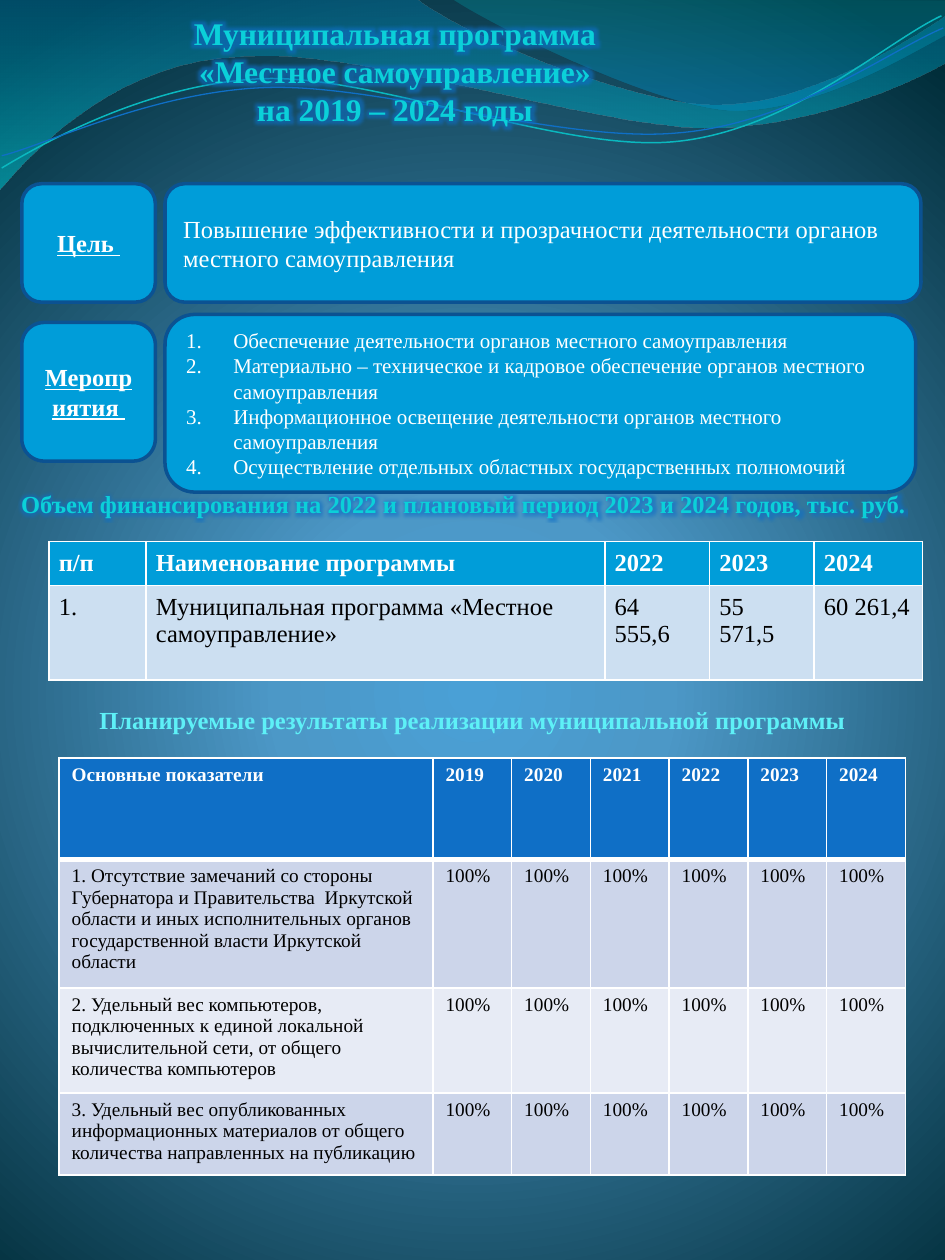
from lxml import etree
from pptx import Presentation
from pptx.dml.color import RGBColor
from pptx.enum.shapes import MSO_SHAPE
from pptx.enum.text import MSO_ANCHOR, MSO_AUTO_SIZE, PP_ALIGN
from pptx.oxml import parse_xml
from pptx.oxml.ns import nsdecls, qn
from pptx.util import Pt

ROUNDED = MSO_SHAPE.ROUNDED_RECTANGLE
TOP, MIDDLE = MSO_ANCHOR.TOP, MSO_ANCHOR.MIDDLE
LEFT, CENTER = PP_ALIGN.LEFT, PP_ALIGN.CENTER
NO_FIT = MSO_AUTO_SIZE.NONE

FONT = "Times New Roman"
WHITE = RGBColor(0xFF, 0xFF, 0xFF)
BLACK = RGBColor(0, 0, 0)
SKY = RGBColor(0x00, 0x9D, 0xD9)
NAVY = RGBColor(0x0B, 0x52, 0x92)
BLUE = RGBColor(0x0F, 0x6F, 0xC6)
TURQUOISE = RGBColor(0x0B, 0xD0, 0xD9)
TEAL = RGBColor(0x0A, 0xB8, 0xBF)
AQUA = RGBColor(0x5E, 0xF0, 0xF7)
PALE = RGBColor(0xCC, 0xDF, 0xF1)
BAND_DARK = RGBColor(0xCC, 0xD5, 0xEA)
BAND_LIGHT = RGBColor(0xE7, 0xEB, 0xF5)

TITLE = ["Муниципальная программа", "«Местное самоуправление»", "на 2019 – 2024 годы"]
GOAL = ["Повышение эффективности и прозрачности деятельности органов местного самоуправления"]
MEASURES = [
    "Обеспечение деятельности органов местного самоуправления",
    "Материально – техническое и кадровое обеспечение органов местного самоуправления",
    "Информационное освещение деятельности органов местного самоуправления",
    "Осуществление отдельных областных государственных полномочий",
]
FUNDING_HEADING = ["Объем финансирования на 2022 и плановый период 2023 и 2024 годов, тыс. руб."]
RESULTS_HEADING = ["Планируемые результаты реализации муниципальной программы"]
FUNDING = [
    ["п/п", "Наименование программы", "2022", "2023", "2024"],
    ["1.", "Муниципальная программа «Местное самоуправление»", "64 555,6", "55 571,5", "60 261,4"],
]
INDICATORS = [
    "1. Отсутствие замечаний со стороны Губернатора и Правительства  Иркутской  области "
    "и иных исполнительных органов государственной власти Иркутской области",
    "2. Удельный вес компьютеров, подключенных к единой локальной вычислительной сети, "
    "от общего количества компьютеров",
    "3. Удельный вес опубликованных информационных материалов от общего количества "
    "направленных на публикацию",
]
YEARS = [str(year) for year in range(2019, 2025)]
RESULTS = [["Основные показатели"] + YEARS] + [[name] + ["100%"] * len(YEARS) for name in INDICATORS]

# Wave outlines in points: a pair is a corner, three pairs are a Bezier curve.
WAVE_LEFT = [
    (0, -0.7), (237.6, -0.7), (257, 16, 358.6, 60.5, 409.7, 60.5),
    (460.8, 60.5, 517.7, 24.5, 540, 8.6), (540.7, 34.6),
    (531.4, 41.8, 469.4, 72.7, 402.5, 72.7), (335.5, 72, 206, 26.6, 139, 32.4),
    (69.8, 33.8, 24.5, 80, -0.7, 108.7),
]
WAVE_RIGHT = [
    (258.5, -0.7), (275, 10.8, 367.9, 59, 415.4, 62.6), (462.2, 66.2, 519, 31, 540, 20.2), (540, 0),
]
LINE_TEAL = [
    (0.7, 96.5), (26, 80.6, 85, 47.5, 149, 45.4), (213, 42.5, 320.4, 87, 385.2, 80.6),
    (450.7, 74.9, 506, 23.8, 537.8, 8.6),
]
LINE_BLUE = [
    (0.7, 89.3), (26, 82.8, 87.8, 51.8, 152.6, 49.7), (217.4, 47.5, 323.3, 82, 387.4, 76.3),
    (452, 71.3, 507.6, 28.8, 539.3, 15.8),
]
WAVES = [
    (WAVE_LEFT, [(0, "0074A1", 45), (100, "00C6CF", 55)]),
    (WAVE_RIGHT, [(0, "00A1A9", 30), (80, "008BBF", 45)]),
]
WAVE_LINES = [(LINE_TEAL, TEAL, 0.85), (LINE_BLUE, BLUE, 0.75)]
BACKDROP = [(0, "4AA0D6", 100), (25, "4C98C7", 100), (100, "002C38", 100)]


def gradient(stops, direction):
    marks = "".join(
        f'<a:gs pos="{position * 1000}"><a:srgbClr val="{color}">'
        f'<a:alpha val="{opacity * 1000}"/></a:srgbClr></a:gs>'
        for position, color, opacity in stops)
    return parse_xml(f'<a:gradFill {nsdecls("a")} rotWithShape="1">'
                     f'<a:gsLst>{marks}</a:gsLst>{direction}</a:gradFill>')


def paint_background(page):
    fill = page.background.fill
    fill.solid()
    properties = page.background._cSld.bg.bgPr
    circle = '<a:path path="circle"><a:fillToRect l="10000" t="110000" r="10000" b="100000"/></a:path>'
    properties.replace(properties.find(qn("a:solidFill")), gradient(BACKDROP, circle))


def add_outline(page, segments, close):
    """Build the outline from straight steps, then join each curve's three steps into one Bezier."""
    points = [pair for segment in segments for pair in zip(segment[::2], segment[1::2])]
    builder = page.shapes.build_freeform(*points[0], scale=Pt(1))
    builder.add_line_segments(points[1:], close=close)
    shape = builder.convert_to_shape()
    shape.shadow.inherit = False
    steps = iter(list(shape._element.iter(qn("a:lnTo"))))
    for segment in segments[1:]:
        first = next(steps)
        if len(segment) == 6:
            first.addprevious(curve := etree.Element(qn("a:cubicBezTo")))
            for step in (first, next(steps), next(steps)):
                curve.append(step[0])
                step.getparent().remove(step)
    return shape


def write(box, lines, size, color, align=LEFT, anchor=TOP, bold=False, underline=False,
          numbered=False, glow=False):
    frame = box.text_frame
    frame.word_wrap = True
    frame.auto_size = NO_FIT
    frame.vertical_anchor = anchor
    frame.text = "\n".join(lines)
    for para in frame.paragraphs:
        para.alignment = align
        if numbered:
            properties = para._p.get_or_add_pPr()
            properties.set("marL", str(Pt(27)))
            properties.set("indent", str(Pt(-27)))
            etree.SubElement(properties, qn("a:buAutoNum"), type="arabicPeriod")
        font = para.font
        font.name, font.size, font.bold, font.underline = FONT, Pt(size), bold, underline
        font.color.rgb = color
        if glow:
            for span in para.runs:
                span._r.get_or_add_rPr().append(parse_xml(
                    f'<a:effectLst {nsdecls("a")}><a:glow rad="{Pt(8)}"><a:srgbClr val="{BLUE}">'
                    '<a:alpha val="60000"/></a:srgbClr></a:glow></a:effectLst>'))


def add_panel(page, place, lines, size, **style):
    panel = page.shapes.add_shape(ROUNDED, *map(Pt, place))
    panel.shadow.inherit = False
    panel.fill.solid()
    panel.fill.fore_color.rgb = SKY
    panel.line.color.rgb = NAVY
    panel.line.width = Pt(2)
    write(panel, lines, size, WHITE, anchor=MIDDLE, **style)


def add_grid(page, left, top, widths, heights, rows, size, fills, margins, header_rule):
    table = page.shapes.add_table(len(rows), len(widths), Pt(left), Pt(top),
                                  Pt(sum(widths)), Pt(sum(heights))).table
    for column, width in zip(table.columns, widths):
        column.width = Pt(width)
    for index, (row, height) in enumerate(zip(table.rows, heights)):
        row.height = Pt(height)
        header = index == 0
        for cell, text in zip(row.cells, rows[index]):
            cell.margin_left = cell.margin_right = Pt(margins[0])
            cell.margin_top = cell.margin_bottom = Pt(margins[1])
            cell.text = text
            font = cell.text_frame.paragraphs[0].font
            font.name, font.size, font.bold = FONT, Pt(size), header
            font.color.rgb = WHITE if header else BLACK
            properties = cell._tc.get_or_add_tcPr()
            for side in ("lnL", "lnR", "lnT", "lnB"):
                ruled = (header and side == "lnB") or (index == 1 and side == "lnT")
                width = header_rule if ruled else 1
                properties.append(parse_xml(
                    f'<a:{side} {nsdecls("a")} w="{Pt(width)}"><a:solidFill>'
                    f'<a:srgbClr val="{WHITE}"/></a:solidFill></a:{side}>'))
            cell.fill.solid()
            cell.fill.fore_color.rgb = fills[index]


deck = Presentation()
deck.slide_width, deck.slide_height = Pt(540), Pt(720)
page = deck.slides.add_slide(deck.slide_layouts[5])
paint_background(page)

for outline, stops in WAVES:
    wave = add_outline(page, outline, close=True)
    wave.line.fill.background()
    geometry = wave._element.spPr.find(qn("a:custGeom"))
    geometry.addnext(gradient(stops, '<a:lin ang="5400000" scaled="0"/>'))
for outline, color, width in WAVE_LINES:
    line = add_outline(page, outline, close=False)
    line.fill.background()
    line.line.color.rgb = color
    line.line.width = Pt(width)

title = page.shapes.title
page.shapes._spTree.append(title._element)
title.left, title.top, title.width, title.height = Pt(-5.8), Pt(4.5), Pt(463), Pt(72.7)
write(title, TITLE, 18, TURQUOISE, align=CENTER, bold=True, glow=True)

label = dict(align=CENTER, bold=True, underline=True)
add_panel(page, (12.5, 105, 76.3, 67.7), ["Цель "], 14, **label)
add_panel(page, (94.3, 105, 432, 67.7), GOAL, 14)
add_panel(page, (12.5, 184.3, 76.3, 79.2), ["Мероприятия "], 14, **label)
add_panel(page, (94.3, 179.7, 429, 101.5), MEASURES, 12, numbered=True)

for place, lines, color, glow in [
    ((-6.5, 275.8, 543, 24.5), FUNDING_HEADING, TURQUOISE, True),
    ((11.2, 399.6, 517.7, 24.5), RESULTS_HEADING, AQUA, False),
]:
    heading = page.shapes.add_textbox(*map(Pt, place))
    write(heading, lines, 14, color, align=CENTER, bold=True, glow=glow)

add_grid(page, 28, 309.5, [55.5, 262.2, 59.8, 59.8, 61.9], [25, 54.2], FUNDING, 14,
         [SKY, PALE], (5.6, 4.7), 1)
add_grid(page, 33.8, 433.2, [213.6] + [45] * len(YEARS), [57.8, 73.6, 60, 46.8], RESULTS, 11,
         [BLUE, BAND_DARK, BAND_LIGHT, BAND_DARK], (7.2, 3.6), 3)

deck.save("out.pptx")
